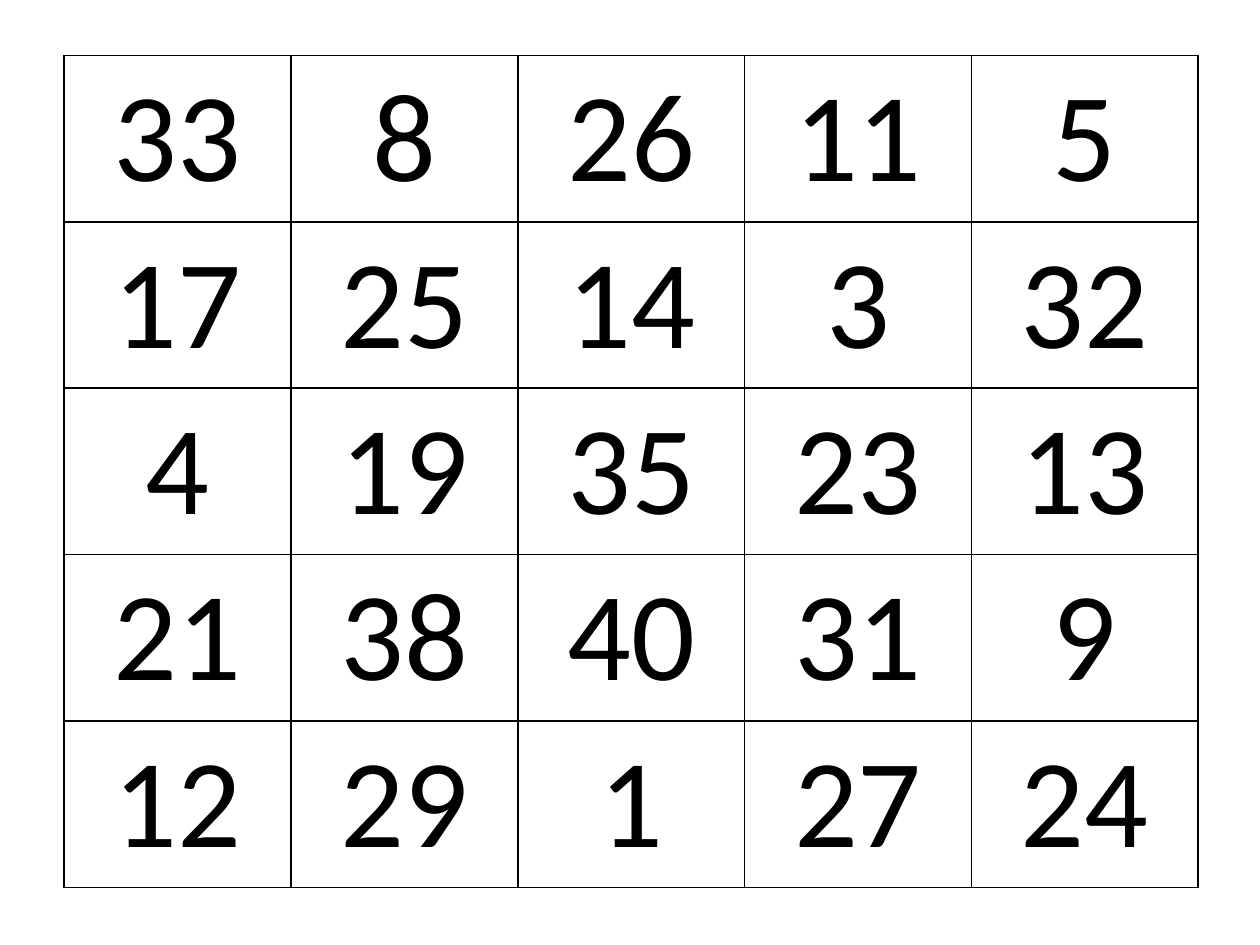
"""Build a five by five bingo card of large numbers."""
from dataclasses import dataclass

from lxml import etree
from pptx import Presentation
from pptx import util as u
from pptx.dml.color import RGBColor
from pptx.enum import text
from pptx.oxml import ns


@dataclass(frozen=True)
class Card:
    left: float
    top: float
    column_width: float
    row_height: float
    numbers: tuple[tuple[int, ...], ...]


INK = "000000"
BINGO = Card(0.51, 0.44, 1.8, 1.32, (
    (33, 8, 26, 11, 5),
    (17, 25, 14, 3, 32),
    (4, 19, 35, 23, 13),
    (21, 38, 40, 31, 9),
    (12, 29, 1, 27, 24),
))


def color(value: str) -> RGBColor:
    return RGBColor.from_string(value)


def add_borders(square) -> None:
    properties = square._tc.get_or_add_tcPr()
    for side in ("a:lnL", "a:lnR", "a:lnT", "a:lnB"):
        border = etree.SubElement(properties, ns.qn(side), w=str(u.Pt(1)))
        fill = etree.SubElement(border, ns.qn("a:solidFill"))
        etree.SubElement(fill, ns.qn("a:srgbClr"), val=str(color(INK)))


def write_number(square, number: int) -> None:
    add_borders(square)
    square.fill.background()
    paragraph = square.text_frame.paragraphs[0]
    paragraph.alignment = text.PP_ALIGN.CENTER
    run = paragraph.add_run()
    run.text = str(number)
    run.font.name = "Calibri"
    run.font.size = u.Pt(72)
    run.font.color.rgb = color(INK)


def draw_card(slide, card: Card) -> None:
    rows, columns = len(card.numbers), len(card.numbers[0])
    grid = slide.shapes.add_table(
        rows, columns, u.Inches(card.left), u.Inches(card.top),
        u.Inches(columns * card.column_width), u.Inches(rows * card.row_height),
    ).table
    grid.first_row = False
    grid.horz_banding = False
    for row, numbers in enumerate(card.numbers):
        for column, number in enumerate(numbers):
            write_number(grid.cell(row, column), number)


def main() -> None:
    deck = Presentation()
    deck.slide_width = u.Inches(10)
    deck.slide_height = u.Inches(7.5)
    draw_card(deck.slides.add_slide(deck.slide_layouts[6]), BINGO)
    deck.save("out.pptx")


if __name__ == "__main__":
    main()
